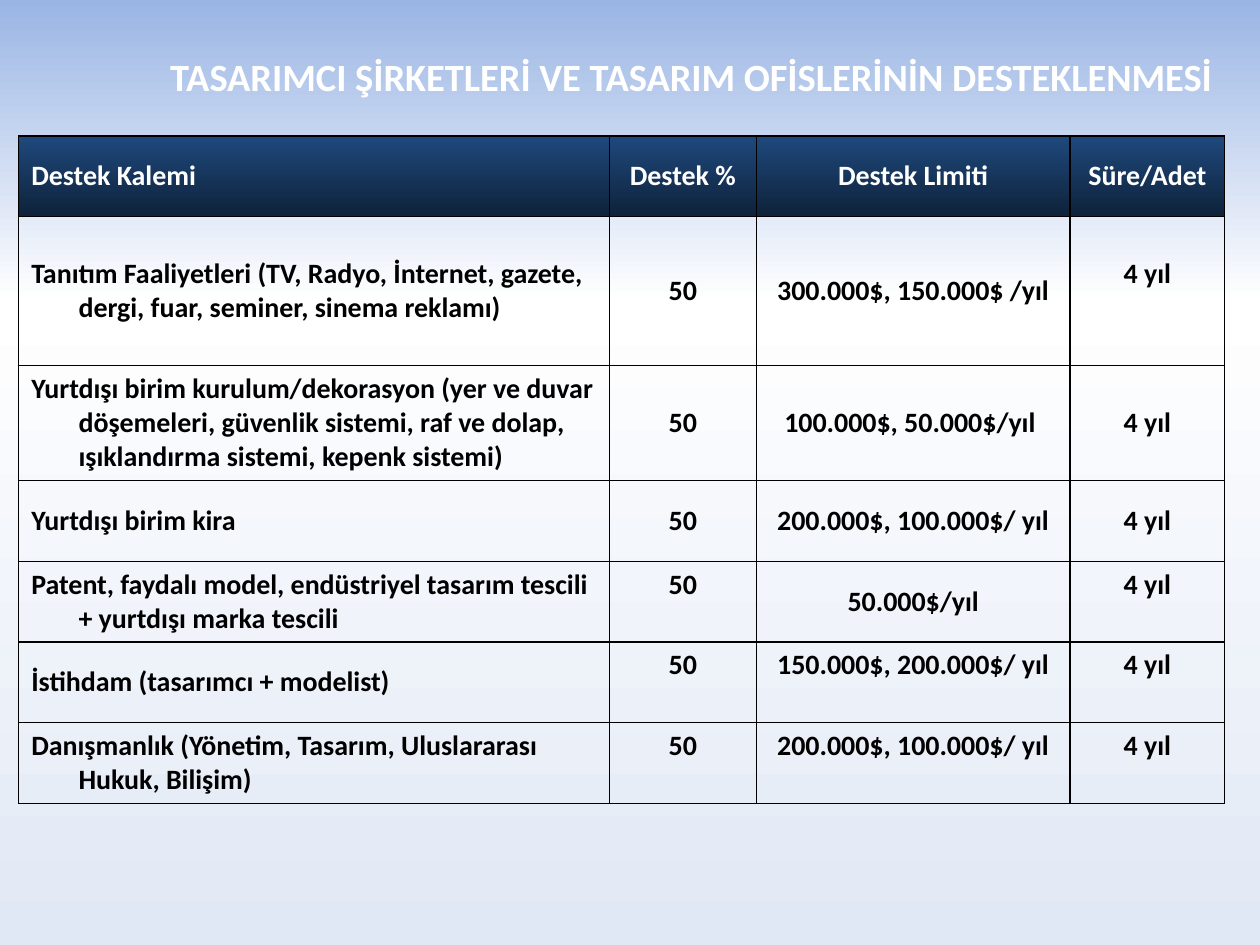
from lxml import etree
from pptx import Presentation
from pptx.dml.color import RGBColor
from pptx.enum import text
from pptx.oxml.ns import qn
from pptx.util import Pt

COLORS = {
    "white": "FFFFFF",
    "black": "000000",
    "sky": "9AB5E4",
    "mist": "E1E8F5",
    "navy": "1F497D",
    "midnight": "0E223A",
}
FONT = "Calibri"
LINE_HEIGHT = 19.5
HANGING = Pt(27)

COLUMN_WIDTHS = [337.5, 84, 179.3, 88.4]
ROW_HEIGHTS = [45.9, 85.1, 65.7] + [46.2] * 4
ROWS = [
    ["Destek Kalemi", "Destek %", "Destek Limiti", "Süre/Adet"],
    ["Tanıtım Faaliyetleri (TV, Radyo, İnternet, gazete, dergi, fuar, seminer, sinema reklamı)",
     "50", "300.000$, 150.000$ /yıl", "4 yıl"],
    ["Yurtdışı birim kurulum/dekorasyon (yer ve duvar döşemeleri, güvenlik sistemi, "
     "raf ve dolap, ışıklandırma sistemi, kepenk sistemi)",
     "50", "100.000$, 50.000$/yıl ", "4 yıl"],
    ["Yurtdışı birim kira", "50", "200.000$, 100.000$/ yıl", "4 yıl"],
    ["Patent, faydalı model, endüstriyel tasarım tescili + yurtdışı marka tescili",
     "50", "50.000$/yıl", "4 yıl"],
    ["İstihdam (tasarımcı + modelist)", "50", "150.000$, 200.000$/ yıl", "4 yıl"],
    ["Danışmanlık (Yönetim, Tasarım, Uluslararası Hukuk, Bilişim)",
     "50", "200.000$, 100.000$/ yıl", "4 yıl"],
]
# Cells (row, column) whose text sits half a line above the middle
RAISED = {(1, 3), (4, 1), (4, 3), (5, 1), (5, 2), (5, 3), (6, 1), (6, 2), (6, 3)}


def set_gradient(fill, owner, stops):
    """Fill from top to bottom with (percent, colour) stops; owner is the XML parent."""
    fill.gradient()
    fill.gradient_angle = 270
    stop_list = next(owner.iter(qn("a:gsLst")))
    for old_stop in list(stop_list):
        stop_list.remove(old_stop)
    for percent, color in stops:
        stop = etree.SubElement(stop_list, qn("a:gs"), pos=str(percent * 1000))
        etree.SubElement(stop, qn("a:srgbClr"), val=COLORS[color])


def add_bold_run(paragraph, words, size, color):
    run = paragraph.add_run()
    run.text = words
    run.font.name = FONT
    run.font.size = Pt(size)
    run.font.bold = True
    run.font.color.rgb = RGBColor.from_string(COLORS[color])


def set_borders(cell, top_width):
    properties = cell._tc.get_or_add_tcPr()
    for side, width in (("L", 0.75), ("R", 0.75), ("T", top_width), ("B", 0.75)):
        line = etree.SubElement(properties, qn(f"a:ln{side}"), w=str(Pt(width)))
        fill = etree.SubElement(line, qn("a:solidFill"))
        etree.SubElement(fill, qn("a:srgbClr"), val=COLORS["black"])


def fill_cell(cell, words, is_header, is_centered, is_raised):
    set_borders(cell, 1 if is_header else 0.75)
    if is_header:
        set_gradient(cell.fill, cell._tc, [(0, "navy"), (100, "midnight")])
    else:
        cell.fill.background()
    cell.vertical_anchor = text.MSO_ANCHOR.MIDDLE
    cell.margin_left = cell.margin_right = Pt(7.2)
    cell.margin_top = Pt(3.6)
    cell.margin_bottom = Pt(3.6 + (LINE_HEIGHT if is_raised else 0))
    paragraph = cell.text_frame.paragraphs[0]
    paragraph.alignment = text.PP_ALIGN.CENTER if is_centered else text.PP_ALIGN.LEFT
    properties = paragraph._p.get_or_add_pPr()
    properties.set("marL", str(HANGING))
    properties.set("indent", str(-HANGING))
    add_bold_run(paragraph, words, 16, "white" if is_header else "black")


def add_title(slide, left, top, width, height):
    box = slide.shapes.add_textbox(Pt(left), Pt(top), Pt(width), Pt(height))
    frame = box.text_frame
    frame.word_wrap = True
    frame.vertical_anchor = text.MSO_ANCHOR.MIDDLE
    paragraph = frame.paragraphs[0]
    paragraph.alignment = text.PP_ALIGN.RIGHT
    add_bold_run(paragraph, "TASARIMCI ŞİRKETLERİ VE TASARIM OFİSLERİNİN DESTEKLENMESİ", 22, "white")


def add_support_table(slide, left, top):
    table = slide.shapes.add_table(
        len(ROWS), len(COLUMN_WIDTHS), Pt(left), Pt(top),
        Pt(sum(COLUMN_WIDTHS)), Pt(sum(ROW_HEIGHTS))).table
    table.first_row = table.horz_banding = False
    for column, width in zip(table.columns, COLUMN_WIDTHS):
        column.width = Pt(width)
    for row, height in zip(table.rows, ROW_HEIGHTS):
        row.height = Pt(height)
    for row_index, row in enumerate(ROWS):
        for column_index, words in enumerate(row):
            fill_cell(table.cell(row_index, column_index), words,
                      row_index == 0, column_index > 0,
                      (row_index, column_index) in RAISED)


def main():
    presentation = Presentation()
    presentation.slide_width, presentation.slide_height = Pt(720), Pt(540)
    slide = presentation.slides.add_slide(presentation.slide_layouts[6])
    set_gradient(slide.background.fill, slide.element,
                 [(0, "sky"), (32, "white"), (100, "mist")])
    add_title(slide, 77, 28, 623, 31)
    add_support_table(slide, 10.7, 77.8)
    presentation.save("out.pptx")


if __name__ == "__main__":
    main()
